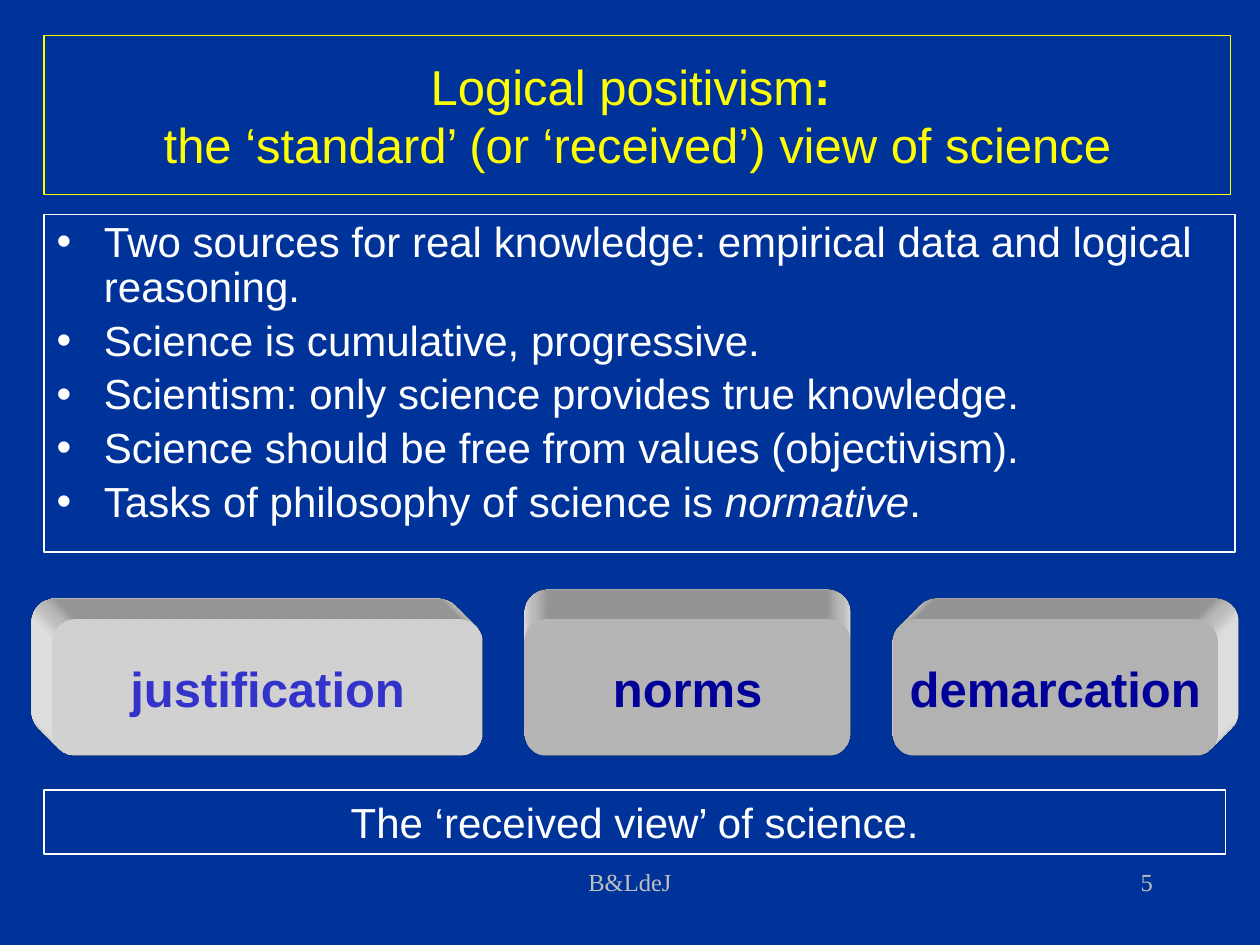
from lxml.etree import fromstring
from pptx import Presentation
from pptx.dml.color import RGBColor
from pptx.enum.shapes import MSO_SHAPE as SHAPE
from pptx.enum.text import MSO_ANCHOR as ANCHOR, MSO_AUTO_SIZE as FIT, PP_ALIGN as ALIGN
from pptx.util import Pt

NAVY, YELLOW, WHITE, SILVER = "003399", "FFFF00", "FFFFFF", "BFBFBF"
TITLE = [[("Logical positivism", ""), (": ", "bold"), ("\v", ""),
          ("the ‘standard’ (or ‘received’) view of science", "")]]
POINTS = [
    [("Two sources for real knowledge: empirical data and logical reasoning.", "")],
    [("Science is cumulative, progressive.", "")],
    [("Scientism: only science provides true knowledge.", "")],
    [("Science should be free from values (objectivism).", "")],
    [("Tasks of philosophy of science is ", ""), ("normative", "italic"), (".", "")],
]
SUMMARY = [[("The ‘received view’ of science.", "")]]
BLOCKS = [
    ("demarcation", 510, 186, "000099", "legacyObliqueTopRight"),
    ("norms", 300, 186, "000099", "legacyObliqueTop"),
    ("justification", 30, 246, "3333CC", "legacyObliqueTopLeft"),
]
BLOCK_TOP, BLOCK_HEIGHT = 354, 78
FOOTERS = [("B&LdeJ", 246, 228, ALIGN.CENTER), ("5", 516, 150, ALIGN.RIGHT)]

DRAWING = "http://schemas.openxmlformats.org/drawingml/2006/main"
SCENE = """<a:scene3d xmlns:a="{}"><a:camera prst="{}"/>
<a:lightRig rig="legacyFlat3" dir="b"/></a:scene3d>"""
SOLID = """<a:sp3d xmlns:a="{}" extrusionH="430200" prstMaterial="legacyMatte">
<a:bevelT w="13500" h="13500" prst="angle"/><a:bevelB w="13500" h="13500" prst="angle"/>
<a:extrusionClr><a:srgbClr val="FFFFFF"/></a:extrusionClr></a:sp3d>"""


def colour(code):
    return RGBColor.from_string(code)


def place(box, left, top, width, height):
    box.left, box.top, box.width, box.height = Pt(left), Pt(top), Pt(width), Pt(height)


def outline(box, code):
    box.line.color.rgb = colour(code)
    box.line.width = Pt(0.75)


def write(box, lines, size, code, align, anchor=ANCHOR.TOP, font="Arial", wrap=True):
    frame = box.text_frame
    frame.auto_size, frame.word_wrap, frame.vertical_anchor = FIT.NONE, wrap, anchor
    for index, pieces in enumerate(lines):
        para = frame.paragraphs[0] if index == 0 else frame.add_paragraph()
        para.alignment = align
        for words, style in pieces:
            if words == "\v":
                para.add_line_break()
                continue
            span = para.add_run()
            span.text = words
            span.font.name, span.font.size = font, Pt(size)
            span.font.color.rgb = colour(code)
            span.font.bold, span.font.italic = style == "bold", style == "italic"


deck = Presentation()
deck.slide_width, deck.slide_height = Pt(720), Pt(540)
page = deck.slides.add_slide(deck.slide_layouts[1])
page.background.fill.solid()
page.background.fill.fore_color.rgb = colour(NAVY)

for words, left, width, align in FOOTERS:
    footer = page.shapes.add_textbox(Pt(left), Pt(492), Pt(width), Pt(36))
    write(footer, [[(words, "")]], 14, SILVER, align, font="Times New Roman")

title, body = page.shapes.title, page.placeholders[1]
place(title, 25.2, 20.4, 678, 90.6)
outline(title, YELLOW)
write(title, TITLE, 28, YELLOW, ALIGN.CENTER, ANCHOR.MIDDLE)

place(body, 25.2, 122.5, 680.5, 193)
outline(body, WHITE)
write(body, POINTS, 24, WHITE, ALIGN.LEFT)
for para in body.text_frame.paragraphs:
    para.line_spacing = 0.9

for words, left, width, ink, camera in BLOCKS:
    block = page.shapes.add_shape(SHAPE.ROUNDED_RECTANGLE, Pt(left), Pt(BLOCK_TOP),
                                  Pt(width), Pt(BLOCK_HEIGHT))
    block.shadow.inherit = False
    block.fill.solid()
    block.fill.fore_color.rgb = colour(WHITE)
    block.line.fill.background()
    write(block, [[(words, "bold")]], 28, ink, ALIGN.CENTER, ANCHOR.MIDDLE, wrap=False)
    properties = block.element.spPr
    properties.append(fromstring(SCENE.format(DRAWING, camera)))
    properties.append(fromstring(SOLID.format(DRAWING)))

summary = page.shapes.add_shape(SHAPE.RECTANGLE, Pt(25.2), Pt(451.5), Pt(675), Pt(36.5))
summary.shadow.inherit = False
summary.fill.background()
outline(summary, WHITE)
write(summary, SUMMARY, 24, WHITE, ALIGN.CENTER)

deck.save("out.pptx")
